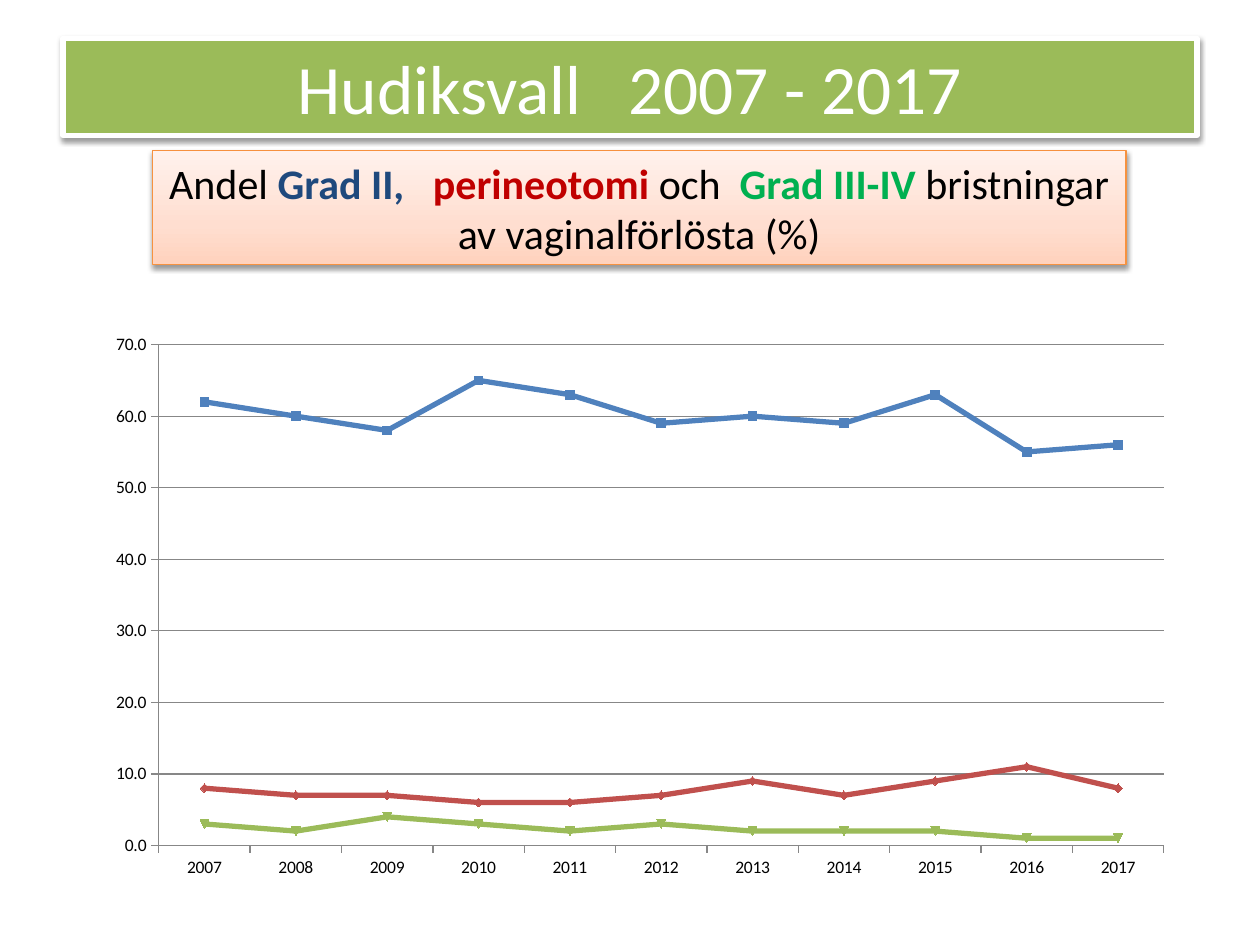
from lxml import etree
from pptx import Presentation
from pptx import util as u
from pptx.chart.data import CategoryChartData
from pptx.dml.color import RGBColor
from pptx.enum import chart as c, shapes, text
from pptx.oxml import parse_xml
from pptx.oxml.ns import nsdecls, qn


def color(hex_value):
    return RGBColor.from_string(hex_value)


def add_banner(left, top, width, height, line_color, line_width, paragraphs, size):
    """Add a shadowed rectangle; each paragraph is a list of (text, color, bold)."""
    shape = slide.shapes.add_shape(
        shapes.MSO_SHAPE.RECTANGLE, u.Cm(left), u.Cm(top), u.Cm(width), u.Cm(height))
    shape.line.color.rgb = color(line_color)
    shape.line.width = u.Pt(line_width)
    shape.shadow.inherit = False
    effects = shape.element.spPr.find(qn("a:effectLst"))
    effects.append(parse_xml(
        f'<a:outerShdw {nsdecls("a")} blurRad="40000" dist="20000" dir="5400000" '
        'rotWithShape="0"><a:srgbClr val="000000"><a:alpha val="38000"/>'
        '</a:srgbClr></a:outerShdw>'))
    frame = shape.text_frame
    frame.vertical_anchor = text.MSO_ANCHOR.MIDDLE
    frame.word_wrap = False
    for index, runs in enumerate(paragraphs):
        paragraph = frame.add_paragraph() if index else frame.paragraphs[0]
        paragraph.alignment = text.PP_ALIGN.CENTER
        for words, run_color, bold in runs:
            run = paragraph.add_run()
            run.text = words
            run.font.name = "Calibri"
            run.font.size = u.Pt(size)
            run.font.bold = bold
            run.font.color.rgb = color(run_color)
    return shape


presentation = Presentation()
presentation.slide_width = u.Cm(25.4)
presentation.slide_height = u.Cm(19.05)
slide = presentation.slides.add_slide(presentation.slide_layouts[6])

# Title
title = add_banner(1.27, 0.77, 22.86, 1.96, "FFFFFF", 3,
                   [[("Hudiksvall   2007 - 2017", "FFFFFF", False)]], 39.6)
title.fill.solid()
title.fill.fore_color.rgb = color("9BBB59")

# Subtitle, where the coloured words serve as the chart's key
subtitle = add_banner(3.07, 3.03, 19.63, 2.31, "F69240", 0.75, [
    [("Andel ", "000000", False),
     ("Grad II,   ", "1F497D", True),
     ("perineotomi ", "C00000", True),
     ("och  ", "000000", False),
     ("Grad III-IV ", "00B050", True),
     ("bristningar", "000000", False)],
    [("av vaginalförlösta (%)", "000000", False)],
], 24)
subtitle.fill.gradient()
subtitle.fill.gradient_angle = 90
stops = subtitle.element.spPr.find(qn("a:gradFill")).find(qn("a:gsLst"))
for stop in list(stops):
    stops.remove(stop)
for position, stop_color in ((0, "FFD2BD"), (35, "FFDED0"), (100, "FFF2ED")):
    stop = etree.SubElement(stops, qn("a:gs"), pos=str(position * 1000))
    etree.SubElement(stop, qn("a:srgbClr"), val=stop_color)

# Line chart
series_list = [
    ("Series 1", "4F81BD", (62, 60, 58, 65, 63, 59, 60, 59, 63, 55, 56)),
    ("Series 2", "C0504D", (8, 7, 7, 6, 6, 7, 9, 7, 9, 11, 8)),
    ("Series 3", "9BBB59", (3, 2, 4, 3, 2, 3, 2, 2, 2, 1, 1)),
]
chart_data = CategoryChartData(number_format="0.0")
chart_data.categories = [str(year) for year in range(2007, 2018)]
for name, _, values in series_list:
    chart_data.add_series(name, values)
chart = slide.shapes.add_chart(
    c.XL_CHART_TYPE.LINE_MARKERS, u.Cm(1.9), u.Cm(6.52), u.Cm(22), u.Cm(11.4),
    chart_data).chart
chart.has_legend = False
chart.has_title = False
chart.font.name = "Calibri"
chart.font.size = u.Pt(10)
chart.font.color.rgb = color("000000")
chart.plots[0].vary_by_categories = False

for series, (_, series_color, _) in zip(chart.plots[0].series, series_list):
    series.smooth = False
    series.format.line.color.rgb = color(series_color)
    series.format.line.width = u.Pt(3)
    series.marker.style = c.XL_MARKER_STYLE.AUTOMATIC
    series.marker.size = 5
    series.marker.format.fill.solid()
    series.marker.format.fill.fore_color.rgb = color(series_color)
    series.marker.format.line.color.rgb = color(series_color)

value_axis = chart.value_axis
value_axis.minimum_scale = 0
value_axis.maximum_scale = 70
value_axis.major_unit = 10
value_axis.has_major_gridlines = True
value_axis.tick_labels.number_format = "0.0"
value_axis.tick_labels.number_format_is_linked = False
for axis in (chart.category_axis, value_axis):
    axis.major_tick_mark = c.XL_TICK_MARK.OUTSIDE
for part in (chart.category_axis, value_axis, value_axis.major_gridlines):
    part.format.line.color.rgb = color("878787")
    part.format.line.width = u.Pt(0.75)

presentation.save("out.pptx")
